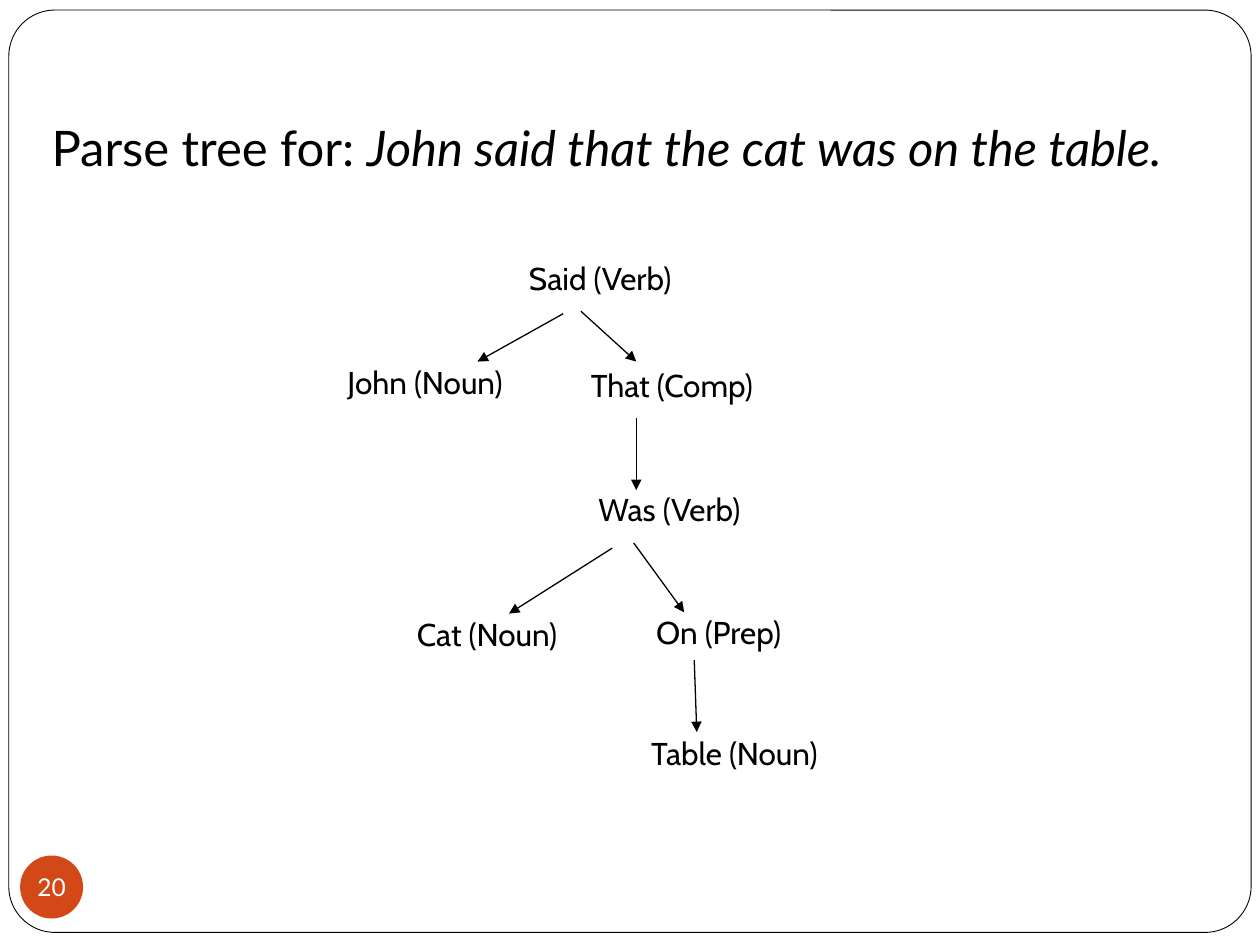
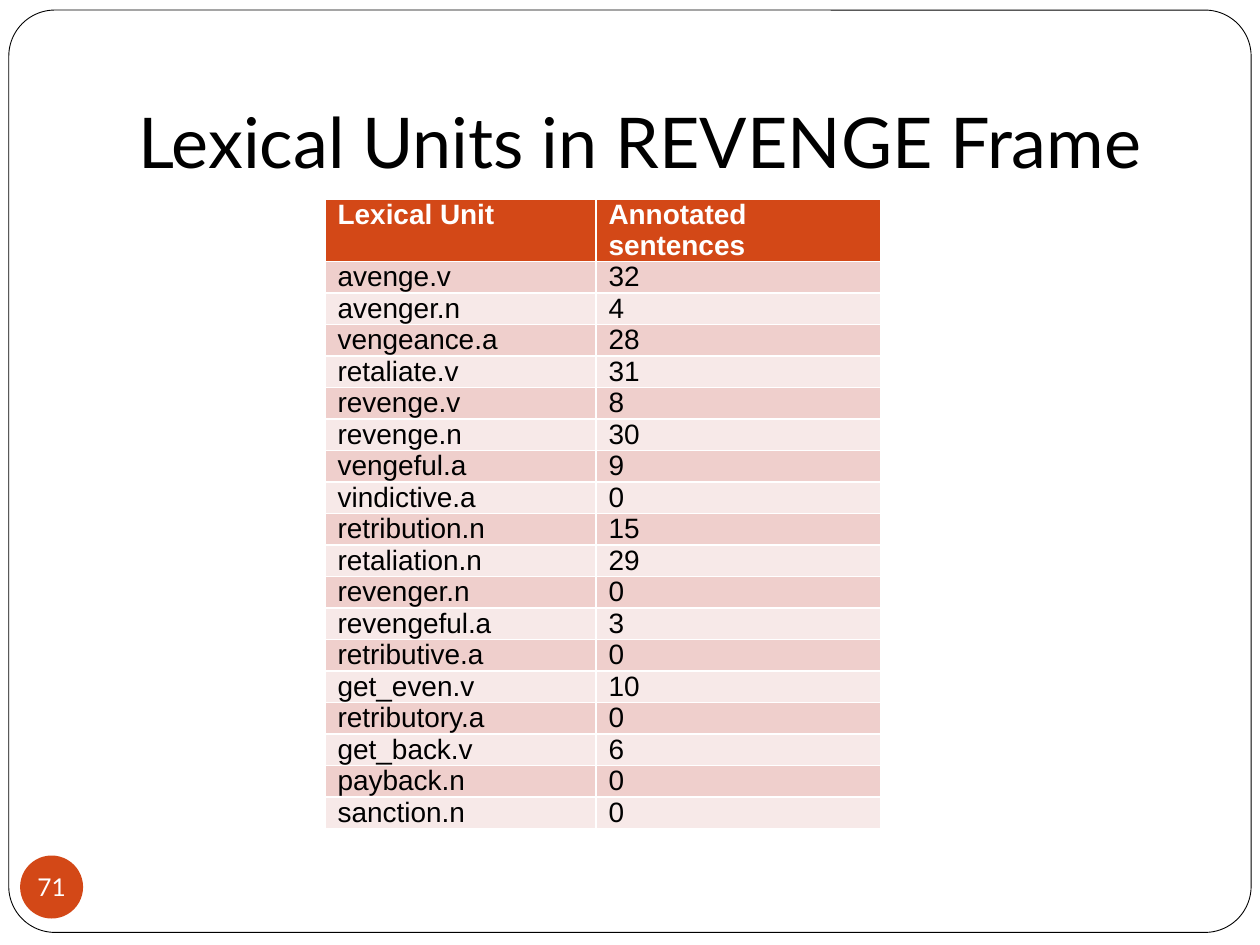
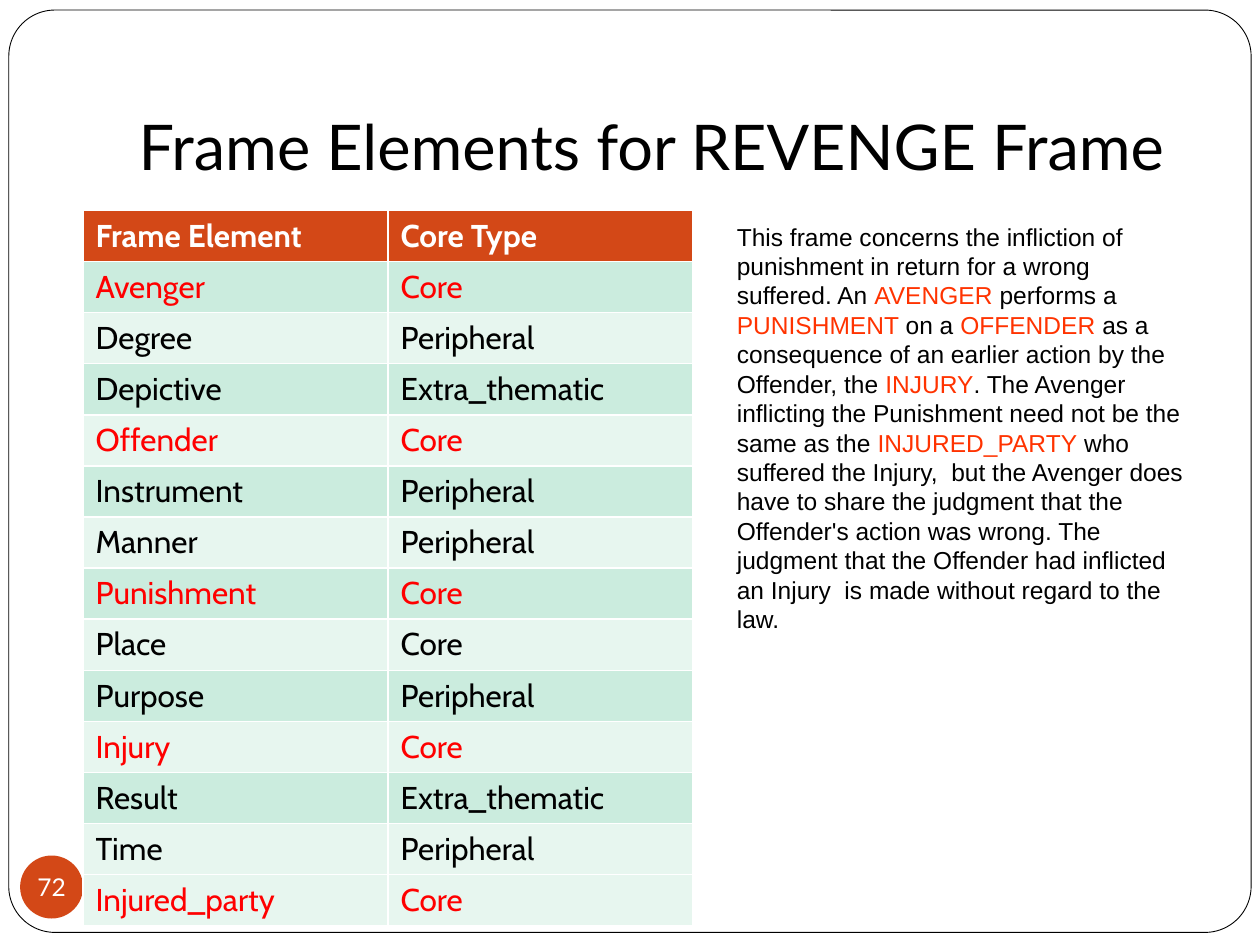
import pptx
import pptx.dml.color
import pptx.enum.shapes
import pptx.enum.text
import pptx.oxml
import pptx.util
import lxml.etree

Inches = pptx.util.Inches
Pt = pptx.util.Pt
RGBColor = pptx.dml.color.RGBColor
MSO_SHAPE = pptx.enum.shapes.MSO_SHAPE
MSO_ANCHOR = pptx.enum.text.MSO_ANCHOR
PP_ALIGN = pptx.enum.text.PP_ALIGN
qn = pptx.oxml.ns.qn

BLACK = RGBColor(0x00, 0x00, 0x00)
WHITE = RGBColor(0xFF, 0xFF, 0xFF)
ACCENT = RGBColor(0xD3, 0x48, 0x17)
RED = RGBColor(0xFF, 0x00, 0x00)
ORANGE = RGBColor(0xFF, 0x33, 0x00)
PINK_BANDS = RGBColor(0xEF, 0xCF, 0xCC), RGBColor(0xF7, 0xE9, 0xE8)
GREEN_BANDS = RGBColor(0xCB, 0xEC, 0xDE), RGBColor(0xE7, 0xF6, 0xEF)

TREE_NODES = [
    ("Said (Verb)", 4.1, 1.97, 1.43),
    ("John (Noun)", 2.66, 2.8, 1.56),
    ("That (Comp)", 4.59, 2.82, 1.61),
    ("Was (Verb)", 4.65, 3.81, 1.4),
    ("Cat (Noun)", 3.21, 4.8, 1.42),
    ("On (Prep)", 5.11, 4.78, 1.27),
    ("Table (Noun)", 5.07, 5.74, 1.63),
]
TREE_ARROWS = [
    (4.47, 2.49, 3.79, 2.87),
    (4.61, 2.47, 5.05, 2.87),
    (5.05, 3.32, 5.05, 3.89),
    (4.86, 4.35, 4.04, 4.87),
    (5.03, 4.31, 5.43, 4.86),
    (5.51, 5.24, 5.53, 5.81),
]
LEXICAL_UNITS = [
    ("Lexical Unit", "Annotated sentences"),
    ("avenge.v", 32), ("avenger.n", 4), ("vengeance.a", 28),
    ("retaliate.v", 31), ("revenge.v", 8), ("revenge.n", 30),
    ("vengeful.a", 9), ("vindictive.a", 0), ("retribution.n", 15),
    ("retaliation.n", 29), ("revenger.n", 0), ("revengeful.a", 3),
    ("retributive.a", 0), ("get_even.v", 10), ("retributory.a", 0),
    ("get_back.v", 6), ("payback.n", 0), ("sanction.n", 0),
]
FRAME_ELEMENTS = [
    ("Frame Element", "Core Type"),
    ("Avenger", "Core"), ("Degree", "Peripheral"),
    ("Depictive", "Extra_thematic"), ("Offender", "Core"),
    ("Instrument", "Peripheral"), ("Manner", "Peripheral"),
    ("Punishment", "Core"), ("Place", "Core"),
    ("Purpose", "Peripheral"), ("Injury", "Core"),
    ("Result", "Extra_thematic"), ("Time", "Peripheral"),
    ("Injured_party", "Core"),
]
KEY_ELEMENTS = {"Avenger", "Offender", "Punishment", "Injury", "Injured_party"}
DEFINITION = [
    ("This frame concerns the infliction of punishment in return for a wrong "
     "suffered. An ", BLACK),
    ("AVENGER ", ORANGE),
    ("performs a ", BLACK),
    ("PUNISHMENT ", ORANGE),
    ("on a ", BLACK),
    ("OFFENDER ", ORANGE),
    ("as a consequence of an earlier action by the Offender, the ", BLACK),
    ("INJURY", ORANGE),
    (". The Avenger inflicting the Punishment need not be the same as the ", BLACK),
    ("INJURED_PARTY", ORANGE),
    (" who suffered the Injury,  but the Avenger does have to share the judgment "
     "that the Offender's action was wrong. The judgment that the Offender had "
     "inflicted an Injury  is made without regard to the law.", BLACK),
]


class Deck:
    title_font = "Lato"
    tree_font = "Cabin"
    plain_font = "Arial"

    def __init__(self):
        self.prs = pptx.Presentation()
        self.prs.slide_width = Inches(10)
        self.prs.slide_height = Inches(7.5)
        self.slide = None

    def set_font(self, font, name, size, color=BLACK, bold=False):
        font.name = name
        font.size = Pt(size)
        font.color.rgb = color
        font.bold = bold

    def add_slide(self, number):
        self.slide = self.prs.slides.add_slide(self.prs.slide_layouts[5])
        self.frame()
        self.number_badge(number)

    def frame(self):
        sp = self.slide.shapes.add_shape(
            MSO_SHAPE.ROUNDED_RECTANGLE,
            Inches(0.07), Inches(0.08), Inches(9.86), Inches(7.32))
        sp.adjustments[0] = 0.05
        sp.shadow.inherit = False
        sp.fill.solid()
        sp.fill.fore_color.rgb = WHITE
        sp.line.color.rgb = BLACK
        sp.line.width = Pt(0.5)
        self.slide.shapes.element.insert(2, sp.element)

    def number_badge(self, number):
        sp = self.slide.shapes.add_shape(
            MSO_SHAPE.OVAL, Inches(0.16), Inches(6.79), Inches(0.5), Inches(0.5))
        sp.shadow.inherit = False
        sp.fill.solid()
        sp.fill.fore_color.rgb = ACCENT
        sp.line.fill.background()
        tf = sp.text_frame
        tf.margin_left = tf.margin_right = tf.margin_top = tf.margin_bottom = 0
        tf.word_wrap = False
        tf.vertical_anchor = MSO_ANCHOR.MIDDLE
        p = tf.paragraphs[0]
        p.text = str(number)
        p.alignment = PP_ALIGN.CENTER
        self.set_font(p.font, self.title_font, 14, WHITE)

    def title(self, text, size, left=1, top=0.3, width=8.5, height=1.25):
        sp = self.slide.shapes.title
        sp.left, sp.top = Inches(left), Inches(top)
        sp.width, sp.height = Inches(width), Inches(height)
        tf = sp.text_frame
        tf.auto_size = pptx.enum.text.MSO_AUTO_SIZE.NONE
        tf.vertical_anchor = MSO_ANCHOR.BOTTOM
        tf.margin_bottom = Inches(0.1)
        p = tf.paragraphs[0]
        p.text = text
        p.alignment = PP_ALIGN.LEFT
        self.set_font(p.font, self.title_font, size)
        return p

    def text_box(self, left, top, width, height, wrap):
        sp = self.slide.shapes.add_textbox(
            Inches(left), Inches(top), Inches(width), Inches(height))
        sp.text_frame.word_wrap = wrap
        return sp.text_frame.paragraphs[0]

    def tree_node(self, text, left, top, width):
        p = self.text_box(left, top, width, 0.43, False)
        p.text = text
        p.line_spacing = Pt(24)
        self.set_font(p.font, self.tree_font, 18)

    def arrow(self, x1, y1, x2, y2):
        line = self.slide.shapes.add_connector(
            pptx.enum.shapes.MSO_CONNECTOR.STRAIGHT,
            Inches(x1), Inches(y1), Inches(x2), Inches(y2))
        line.line.color.rgb = BLACK
        line.line.width = Pt(0.75)
        ln = line.line._get_or_add_ln()
        lxml.etree.SubElement(ln, qn("a:tailEnd"), type="triangle")
        lxml.etree.SubElement(line.element.spPr, qn("a:effectLst"))

    def paragraph(self, runs, left, top, width, height):
        p = self.text_box(left, top, width, height, True)
        p.font.name = self.plain_font
        p.font.size = Pt(14)
        for text, color in runs:
            r = p.add_run()
            r.text = text
            r.font.color.rgb = color

    def table(self, rows, left, top, widths, row_height, bands, font, size,
              margin=0.05, red_rows=()):
        table = self.slide.shapes.add_table(
            len(rows), len(widths), Inches(left), Inches(top),
            Inches(sum(widths)), Inches(row_height * len(rows))).table
        for column, width in zip(table.columns, widths):
            column.width = Inches(width)
        for i, row in enumerate(rows):
            header = i == 0
            fill = ACCENT if header else bands[(i - 1) % 2]
            color = WHITE if header else RED if row[0] in red_rows else BLACK
            for j, value in enumerate(row):
                cell = table.cell(i, j)
                cell.margin_top = cell.margin_bottom = Inches(margin)
                cell.fill.solid()
                cell.fill.fore_color.rgb = fill
                p = cell.text_frame.paragraphs[0]
                p.text = str(value)
                self.set_font(p.font, font, size, color, header)
        return table


def main():
    deck = Deck()

    deck.add_slide(20)
    p = deck.title("Parse tree for: ", 28, 0.31, 0.44, 9.19, 1.06)
    p.line_spacing = Pt(20.8)
    r = p.add_run()
    r.text = "John said that the cat was on the table."
    r.font.italic = True
    for node in TREE_NODES:
        deck.tree_node(*node)
    for ends in TREE_ARROWS:
        deck.arrow(*ends)

    deck.add_slide(71)
    deck.title("Lexical Units in REVENGE Frame", 40)
    deck.table(LEXICAL_UNITS, 2.58, 1.58, (2.15, 2.26), 0.25, PINK_BANDS,
               deck.plain_font, 16, margin=0)

    deck.add_slide(72)
    deck.title("Frame Elements for REVENGE Frame", 36)
    table = deck.table(FRAME_ELEMENTS, 0.66, 1.67, (2.42, 2.42), 0.4, GREEN_BANDS,
                       deck.tree_font, 18, red_rows=KEY_ELEMENTS)
    for cell in table.rows[len(FRAME_ELEMENTS) - 1].cells:
        cell.fill.fore_color.rgb = GREEN_BANDS[1]
    deck.paragraph(DEFINITION, 5.75, 1.71, 3.76, 3.64)

    deck.prs.save("out.pptx")


if __name__ == "__main__":
    main()
